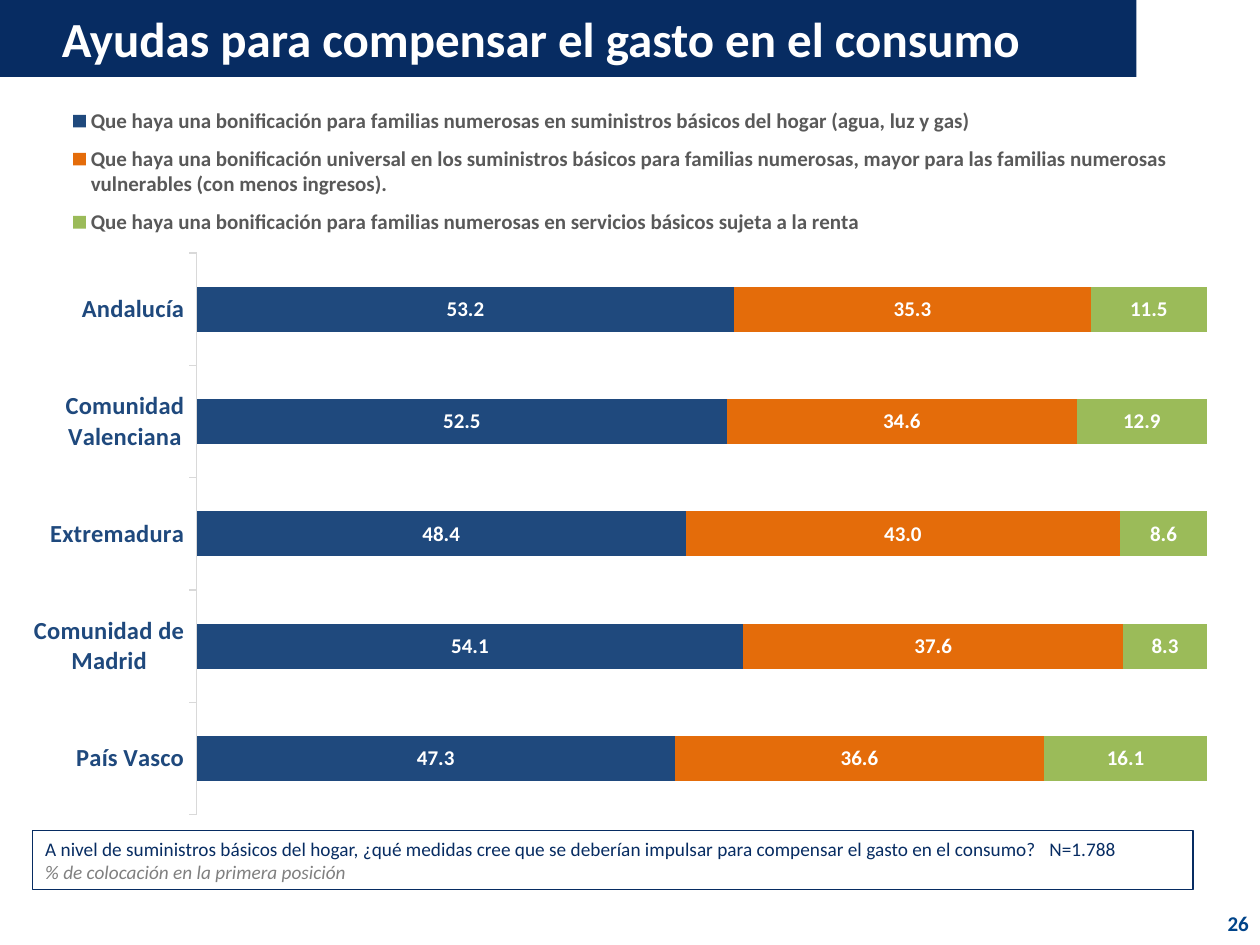
from lxml.etree import SubElement
from pptx import Presentation
from pptx.chart.data import CategoryChartData
from pptx.dml.color import RGBColor
from pptx.enum.chart import XL_CHART_TYPE as ChartType
from pptx.enum.chart import XL_LABEL_POSITION as LabelPosition
from pptx.enum.chart import XL_LEGEND_POSITION as LegendPosition
from pptx.enum.chart import XL_TICK_MARK as TickMark
from pptx.enum.shapes import MSO_SHAPE as Shape
from pptx.enum.text import MSO_ANCHOR as Anchor
from pptx.enum.text import PP_ALIGN as Align
from pptx.oxml.ns import qn
from pptx.util import Inches, Pt

NAVY = "072C62"
BLUE = "1F497D"
WHITE = "FFFFFF"
NUMBER_FORMAT = "####.0"

REGIONS = ["Andalucía", "Comunidad Valenciana", "Extremadura", "Comunidad de Madrid", "País Vasco"]
MEASURES = [
    ("Que haya una bonificación para familias numerosas en suministros básicos del hogar "
     "(agua, luz y gas)", BLUE, [53.2, 52.5, 48.4, 54.1, 47.3]),
    ("Que haya una bonificación universal en los suministros básicos para familias numerosas, "
     "mayor para las familias numerosas vulnerables (con menos ingresos).",
     "E46C0A", [35.3, 34.6, 43.0, 37.6, 36.6]),
    ("Que haya una bonificación para familias numerosas en servicios básicos sujeta a la renta",
     "9BBB59", [11.5, 12.9, 8.6, 8.3, 16.1]),
]
QUESTION = ("A nivel de suministros básicos del hogar, ¿qué medidas cree que se deberían impulsar "
            "para compensar el gasto en el consumo?\tN=1.788")


def color(value):
    return RGBColor.from_string(value)


class SlideBuilder:
    """Adds consistently styled elements to one slide."""

    font_name = "Calibri"

    def __init__(self, slide):
        self.slide = slide

    def style(self, font, size, hex_color, bold=False, italic=False):
        font.name = self.font_name
        font.size = Pt(size)
        font.color.rgb = color(hex_color)
        font.bold = bold
        font.italic = italic

    def title(self, text, left, top, width, height):
        title = self.slide.shapes.title
        title.left, title.top = Inches(left), Inches(top)
        title.width, title.height = Inches(width), Inches(height)
        title.fill.solid()
        title.fill.fore_color.rgb = color(NAVY)
        frame = title.text_frame
        frame.text = text
        frame.vertical_anchor = Anchor.MIDDLE
        frame.margin_left = Inches(0.49)
        paragraph = frame.paragraphs[0]
        paragraph.alignment = Align.LEFT
        self.style(paragraph.font, 28, WHITE, bold=True)

    def page_number(self, text, left, top, width, height):
        box = self.slide.shapes.add_textbox(
            Inches(left), Inches(top), Inches(width), Inches(height))
        frame = box.text_frame
        frame.word_wrap = True
        frame.vertical_anchor = Anchor.MIDDLE
        paragraph = frame.paragraphs[0]
        paragraph.text = text
        paragraph.alignment = Align.RIGHT
        self.style(paragraph.font, 12, "004489", bold=True)

    def note(self, question, remark, left, top, width, height):
        shape = self.slide.shapes.add_shape(
            Shape.RECTANGLE, Inches(left), Inches(top), Inches(width), Inches(height))
        shape.shadow.inherit = False
        shape.fill.background()
        shape.line.color.rgb = color(NAVY)
        shape.line.width = Pt(0.75)
        frame = shape.text_frame
        frame.word_wrap = True
        frame.text = f"{question}\n{remark}"
        first, second = frame.paragraphs
        for paragraph in (first, second):
            paragraph.alignment = Align.LEFT
        self.style(first.font, 11, NAVY)
        self.style(second.font, 11, "808080", italic=True)
        tabs = SubElement(first._p.get_or_add_pPr(), qn("a:tabLst"))
        first._p.pPr.insert(0, tabs)
        SubElement(tabs, qn("a:tab"), pos=str(Inches(7.97)), algn="l")

    def layout(self, parent, index, x, y, width, height, inner=False):
        for old in parent.findall(qn("c:layout")):
            parent.remove(old)
        layout = SubElement(parent, qn("c:layout"))
        parent.insert(index, layout)
        manual = SubElement(layout, qn("c:manualLayout"))
        settings = [("layoutTarget", "inner")] if inner else []
        settings += [("xMode", "edge"), ("yMode", "edge"),
                     ("x", x), ("y", y), ("w", width), ("h", height)]
        for name, value in settings:
            SubElement(manual, qn(f"c:{name}"), val=str(value))

    def stacked_bars(self, categories, measures, left, top, width, height):
        data = CategoryChartData(number_format=NUMBER_FORMAT)
        data.categories = categories
        for name, _, values in measures:
            data.add_series(name, values)
        chart = self.slide.shapes.add_chart(
            ChartType.BAR_STACKED, Inches(left), Inches(top),
            Inches(width), Inches(height), data).chart
        chart.has_title = False
        self.style(chart.font, 10, "000000")

        category_axis = chart.category_axis
        category_axis.reverse_order = True
        category_axis.major_tick_mark = TickMark.OUTSIDE
        category_axis.format.line.color.rgb = color("D9D9D9")
        category_axis.format.line.width = Pt(0.75)
        self.style(category_axis.tick_labels.font, 14, BLUE, bold=True)

        value_axis = chart.value_axis
        value_axis.minimum_scale = 0
        value_axis.maximum_scale = 100
        value_axis.has_major_gridlines = False
        value_axis.visible = False

        chart.has_legend = True
        legend = chart.legend
        legend.position = LegendPosition.BOTTOM
        legend.include_in_layout = False
        self.style(legend.font, 12, "595959", bold=True)
        self.layout(legend._element, 1, 0.03, 0.01, 0.95, 0.21)

        plot = chart.plots[0]
        plot.gap_width = 150
        plot.overlap = 100
        plot.vary_by_categories = False
        for series, (_, fill, _) in zip(plot.series, measures):
            series.format.fill.solid()
            series.format.fill.fore_color.rgb = color(fill)
            labels = series.data_labels
            labels.show_value = True
            labels.number_format = NUMBER_FORMAT
            labels.number_format_is_linked = False
            labels.position = LabelPosition.CENTER
            self.style(labels.font, 12, WHITE, bold=True)
        plot_area = chart.element.find(f".//{qn('c:plotArea')}")
        self.layout(plot_area, 0, 0.147, 0.227, 0.853, 0.773, inner=True)


def main():
    presentation = Presentation()
    presentation.slide_width = Inches(10)
    presentation.slide_height = Inches(7.5)
    slide = presentation.slides.add_slide(presentation.slide_layouts[5])
    builder = SlideBuilder(slide)
    builder.title("Ayudas para compensar el gasto en el consumo", 0, 0, 9.02, 0.61)
    builder.page_number("26", 7.68, 7.13, 2.33, 0.4)
    builder.note(QUESTION, "% de colocación en la primera posición", 0.26, 6.59, 9.21, 0.47)
    builder.stacked_bars(REGIONS, MEASURES, 0.18, 0.7, 9.4, 5.77)
    presentation.save("out.pptx")


if __name__ == "__main__":
    main()
